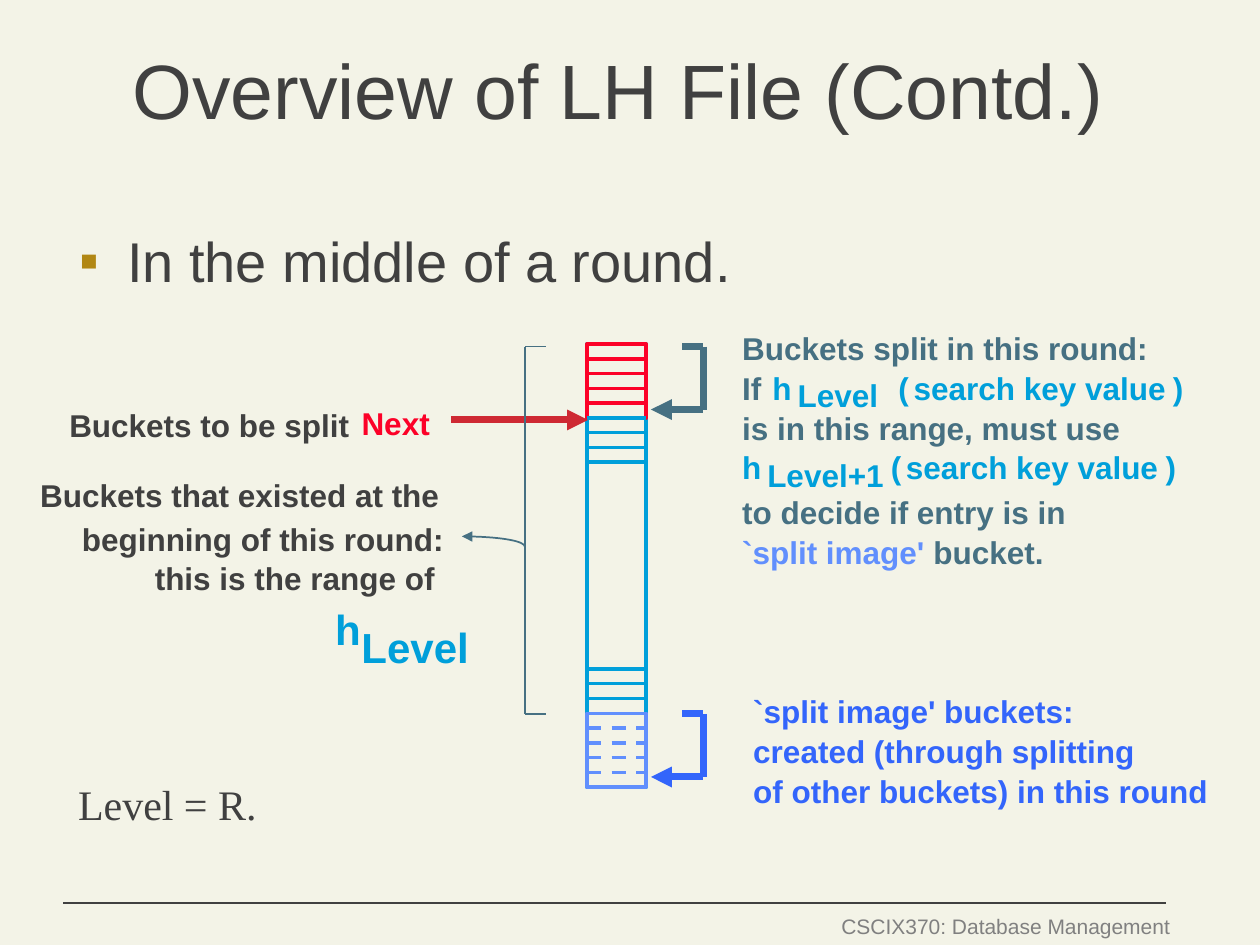
import pptx
import pptx.dml.color
import pptx.enum.dml
import pptx.enum.shapes
import pptx.enum.text
import pptx.oxml
import pptx.oxml.ns
import pptx.util

Pt = pptx.util.Pt
NAMESPACE = pptx.oxml.ns.nsdecls("a")
INK, RED, CYAN, SLATE = "404040", "FC0128", "009FDA", "467082"
VIOLET, BLUE = "618FFD", "3365FB"
CELL = 8.44  # height of one bucket


def color(value):
    return pptx.dml.color.RGBColor.from_string(value)


def style_line(shape, line_color, width, dashed=False, arrow=False):
    """Format an outline; an arrow points at the start of the line."""
    shape.line.color.rgb = color(line_color)
    shape.line.width = Pt(width)
    if dashed:
        shape.line.dash_style = pptx.enum.dml.MSO_LINE.DASH
    if arrow:
        shape.line._get_or_add_ln().append(
            pptx.oxml.parse_xml(f'<a:headEnd {NAMESPACE} type="triangle"/>'))


def add_line(slide, x1, y1, x2, y2, line_color, width, **options):
    connector = slide.shapes.add_connector(
        pptx.enum.shapes.MSO_CONNECTOR.STRAIGHT, Pt(x1), Pt(y1), Pt(x2), Pt(y2))
    style_line(connector, line_color, width, **options)
    connector._element.spPr.append(pptx.oxml.parse_xml(f"<a:effectLst {NAMESPACE}/>"))


def add_text(slide, box, runs, size=18, text_color=INK, bold=True, font="Arial",
             align=pptx.enum.text.PP_ALIGN.LEFT, wrap=False, bullet=None):
    """Place one paragraph; runs is a string or a list of (text, colour)."""
    shape = slide.shapes.add_textbox(*map(Pt, box))
    frame = shape.text_frame
    frame.word_wrap = wrap
    frame.margin_left = frame.margin_right = Pt(3.6)
    frame.margin_top = frame.margin_bottom = Pt(3.6)
    paragraph = frame.paragraphs[0]
    paragraph.alignment = align
    if bullet:
        properties = paragraph._p.get_or_add_pPr()
        properties.set("marL", str(Pt(27)))
        properties.set("indent", str(Pt(-27)))
        for tag in (f'<a:buClr {NAMESPACE}><a:srgbClr val="{bullet}"/></a:buClr>',
                    f'<a:buFont {NAMESPACE} typeface="Arial"/>',
                    f'<a:buChar {NAMESPACE} char="▪"/>'):
            properties.append(pptx.oxml.parse_xml(tag))
    for text, run_color in [(runs, text_color)] if isinstance(runs, str) else runs:
        run = paragraph.add_run()
        run.text = text
        run.font.name = font
        run.font.size = Pt(size)
        run.font.bold = bold
        run.font.color.rgb = color(run_color)


def add_labels(slide, left, top, labels):
    """Place one-line labels given as (x, y, width, text, colour)."""
    for x, y, width, text, text_color in labels:
        add_text(slide, (left + x, top + y, width, 27.4), text, text_color=text_color)


def add_footer(slide, left, top, width):
    add_line(slide, left + width, top, left, top, INK, 0.75)
    add_text(slide, (left + 440, top + 2.4, 196.5, 21), "CSCIX370: Database Management",
             size=12, text_color="808080", bold=False,
             align=pptx.enum.text.PP_ALIGN.RIGHT)


def add_bucket_column(slide, left, top, width):
    # Outline and dividers of each section, counted in buckets
    sections = [
        (0, 30, CYAN, [22, 23, 24, 25], False),
        (25, 30, VIOLET, [26, 27, 28, 29], True),
        (0, 5, RED, [1, 2, 3, 4], False),
    ]
    dividers_after_split = [5, 6, 7, 8]
    for first, last, line_color, dividers, dashed in sections:
        outline = slide.shapes.add_shape(
            pptx.enum.shapes.MSO_SHAPE.RECTANGLE, Pt(left), Pt(top + first * CELL),
            Pt(width), Pt((last - first) * CELL))
        outline.shadow.inherit = False
        outline.fill.background()
        style_line(outline, line_color, 2)
        for divider in dividers:
            y = top + divider * CELL
            add_line(slide, left, y, left + width, y, line_color, 2, dashed=dashed)
    for divider in dividers_after_split:
        y = top + divider * CELL
        add_line(slide, left, y, left + width, y, CYAN, 2)


def add_range_hook(slide, left, top, line_color):
    """Bracket beside the column with an arrow back to it."""
    right, bottom = left + 30, top + 36
    add_line(slide, left + 18, top, right, top, line_color, 4)
    add_line(slide, right, top, right, bottom, line_color, 4)
    add_line(slide, left, bottom, right, bottom, line_color, 4, arrow=True)


def add_range_bracket(slide, left, top, height):
    add_line(slide, left + 12, top, left, top, SLATE, 1)
    add_line(slide, left, top, left, top + height, SLATE, 1)
    add_line(slide, left + 12, top + height, left, top + height, SLATE, 1)

    # Curved arrow from the bracket to its label
    x, y, width, height = left - 36, top + 108.5, 36, 6
    builder = slide.shapes.build_freeform(Pt(x), Pt(y))
    builder.add_line_segments([(Pt(x + width), Pt(y + height))], close=False)
    curve = builder.convert_to_shape()
    curve.shadow.inherit = False
    curve.fill.background()
    style_line(curve, SLATE, 1, arrow=True)
    segment = curve._element.find(".//" + pptx.oxml.ns.qn("a:lnTo"))
    controls = [(0.55 * width, 0), (width, 0.45 * height), (width, height)]
    points = "".join(f'<a:pt x="{Pt(px)}" y="{Pt(py)}"/>' for px, py in controls)
    segment.getparent().replace(segment, pptx.oxml.parse_xml(
        f"<a:cubicBezTo {NAMESPACE}>{points}</a:cubicBezTo>"))


def add_left_labels(slide, left, top):
    add_labels(slide, left, top, [
        (0, 40.6, 236, "Buckets that existed at the", INK),
        (23.8, 65.8, 219.6, "beginning of this round:", INK),
        (65.5, 88.1, 167.8, "this is the range of", INK),
        (183.6, -0.4, 46.8, "Next", RED),
        (16.6, 0.3, 172.8, "Buckets to be split", INK),
    ])
    add_text(slide, (left + 183.6, top + 123.4, 69, 34.6), "Level",
             size=24, text_color=CYAN)
    add_text(slide, (left + 168.5, top + 113.3, 29.5, 34.6), "h",
             size=24, text_color=CYAN)


def add_split_rule(slide, left, top):
    step = 22.8
    add_labels(slide, left, top, [
        (0, 0, 239.8, "Buckets split in this round:", SLATE),
        (0, step, 23.8, "If", SLATE),
        (17.3, step, 23.8, "h", CYAN),
        (31.7, step + 4.3, 54, "Level", CYAN),
        (89.3, step, 13.7, "(", CYAN),
        (97.9, step, 157, "search key value", CYAN),
        (246.2, step, 20, ")", CYAN),
        (0, 2 * step, 223.9, "is in this range, must use", SLATE),
        (0, 3 * step, 23.8, "h", CYAN),
        (14.4, 3 * step + 4.3, 74.9, "Level+1", CYAN),
        (85, 3 * step, 13.7, "(", CYAN),
        (93.6, 3 * step, 157, "search key value", CYAN),
        (241.9, 3 * step, 13.7, ")", CYAN),
        (0, 93.6, 198, "to decide if entry is in", SLATE),
        (0, 116.6, 180, [("`split image' ", VIOLET), ("bucket.", SLATE)], SLATE),
    ])


def add_split_image_note(slide, left, top):
    add_labels(slide, left, top, [
        (0, 0, 191.5, "`split image' buckets:", BLUE),
        (0, 23, 226, "created (through splitting", BLUE),
        (0, 46, 267.8, "of other buckets) in this round", BLUE),
    ])


def main():
    presentation = pptx.Presentation()
    presentation.slide_width, presentation.slide_height = Pt(720), Pt(540)
    slide = presentation.slides.add_slide(presentation.slide_layouts[6])
    slide.background.fill.solid()
    slide.background.fill.fore_color.rgb = color("F3F3E7")

    # Heading, bullet and footer
    add_footer(slide, 36, 516, 630)
    add_text(slide, (72, 21, 612, 87), "Overview of LH File (Contd.)",
             size=44, bold=False, wrap=True)
    add_text(slide, (42, 126, 660, 78), "In the middle of a round.",
             size=32, bold=False, wrap=True, bullet="B18714")

    # Labels around the column
    add_left_labels(slide, 19.4, 228)
    add_split_rule(slide, 420.5, 184.3)
    add_split_image_note(slide, 426.8, 391.7)
    add_text(slide, (41, 441.4, 110, 33), "Level = R.", size=24, bold=False,
             font="Times New Roman")

    # Column of buckets with its brackets and arrows
    add_bucket_column(slide, 335.5, 196.6, 33.8)
    add_range_hook(slide, 372, 198, SLATE)
    add_range_hook(slide, 372, 408, BLUE)
    add_line(slide, 336, 240, 258, 240, "CE2933", 4, arrow=True)
    add_range_bracket(slide, 300, 198, 210)

    presentation.save("out.pptx")


if __name__ == "__main__":
    main()
